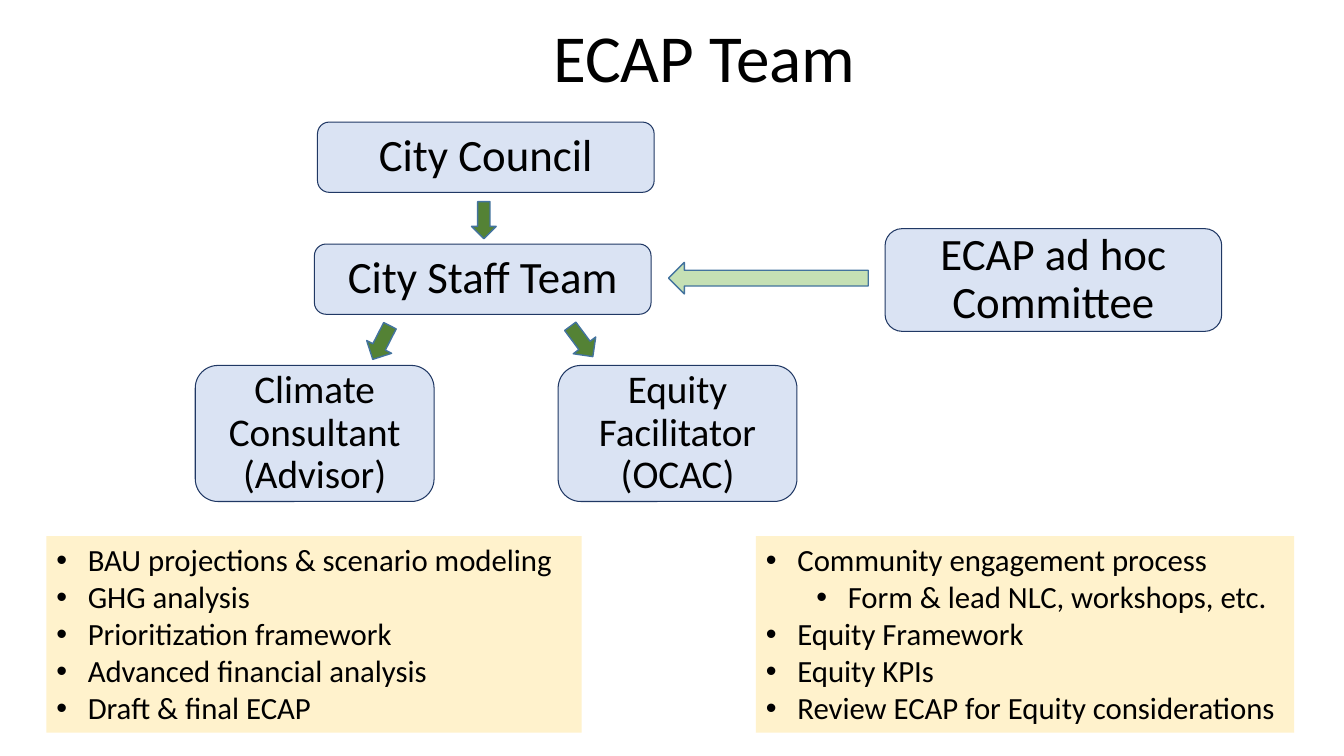
from lxml.etree import SubElement
from pptx import Presentation
from pptx.dml.color import RGBColor
from pptx.enum.shapes import MSO_SHAPE as Shape
from pptx.enum.text import MSO_ANCHOR as Anchor, PP_ALIGN as Align
from pptx.oxml.ns import qn
from pptx.util import Pt

COLORS = {
    "text": "000000",
    "role_fill": "DAE3F3",
    "role_line": "203864",
    "arrow": "548235",
    "advice_arrow": "C5E0B4",
    "arrow_line": "43739E",
    "task_fill": "FFF2CC",
}

# Boxes are left, top, width, height in points.
TITLE_BOX = (290, 12.2, 426.4, 62.6)
ROLES = [
    ((226.8, 87.2, 240.5, 50.2), 32, ["City Council"]),
    ((224.6, 174.3, 240.5, 50.2), 32, ["City Staff Team"]),
    ((632.2, 163.3, 240.5, 73.4), 32, ["ECAP ad hoc Committee"]),
    ((139.5, 261, 170.6, 97.2), 28, ["Climate Consultant", "(Advisor)"]),
    ((398.7, 261, 170.6, 97.2), 28, ["Equity", "Facilitator", "(OCAC)"]),
]
ARROWS = [
    ((336.8, 144, 17.6, 26.5), 0, "arrow"),
    ((262.4, 231.2, 20, 27), 27.1, "arrow"),
    ((405.4, 230.4, 20, 27), 323.3, "arrow"),
    ((537.6, 127.4, 22.5, 142.6), 90, "advice_arrow"),
]
TASKS = [
    ((33.1, 383, 382.3, 140.4), [
        (0, "BAU projections & scenario modeling"),
        (0, "GHG analysis"),
        (0, "Prioritization framework"),
        (0, "Advanced financial analysis"),
        (0, "Draft & final ECAP"),
    ]),
    ((540, 383, 384.5, 140.4), [
        (0, "Community engagement process"),
        (1, "Form & lead NLC, workshops, etc."),
        (0, "Equity Framework"),
        (0, "Equity KPIs"),
        (0, "Review ECAP for Equity considerations"),
    ]),
]


def color(name):
    return RGBColor.from_string(COLORS[name])


def add_para(frame, index, text, size, align):
    para = frame.paragraphs[0] if index == 0 else frame.add_paragraph()
    para.text = text
    para.alignment = align
    para.font.name = "Calibri"
    para.font.size = Pt(size)
    para.font.color.rgb = color("text")
    return para


def add_filled(page, kind, box, fill, line=None, width=1):
    shape = page.shapes.add_shape(kind, *map(Pt, box))
    shape.shadow.inherit = False
    shape.fill.solid()
    shape.fill.fore_color.rgb = color(fill)
    if line:
        shape.line.color.rgb = color(line)
        shape.line.width = Pt(width)
    else:
        shape.line.fill.background()
    return shape


def add_title(page, box, text):
    frame = page.shapes.add_textbox(*map(Pt, box)).text_frame
    frame.word_wrap = True
    frame.vertical_anchor = Anchor.MIDDLE
    add_para(frame, 0, text, 48, Align.CENTER).line_spacing = 0.9


def add_role(page, box, size, lines):
    shape = add_filled(page, Shape.FLOWCHART_ALTERNATE_PROCESS, box,
                       "role_fill", "role_line", 0.75)
    frame = shape.text_frame
    frame.word_wrap = True
    frame.vertical_anchor = Anchor.MIDDLE
    frame.margin_left = frame.margin_right = Pt(1.5)
    frame.margin_top = frame.margin_bottom = Pt(1.5)
    for index, text in enumerate(lines):
        add_para(frame, index, text, size, Align.CENTER).line_spacing = 0.9


def add_arrow(page, box, rotation, fill):
    arrow = add_filled(page, Shape.DOWN_ARROW, box, fill, "arrow_line")
    arrow.rotation = rotation


def set_bullet(para, level):
    """Give the paragraph a hanging bullet at its level."""
    para.level = level
    props = para._p.get_or_add_pPr()
    props.set("marL", str(Pt(22.5 + 36 * level)))
    props.set("indent", str(Pt(-22.5)))
    SubElement(props, qn("a:buFont")).set("typeface", "Arial")
    SubElement(props, qn("a:buChar")).set("char", "•")


def add_tasks(page, box, items):
    frame = add_filled(page, Shape.RECTANGLE, box, "task_fill").text_frame
    frame.word_wrap = True
    frame.vertical_anchor = Anchor.TOP
    for index, (level, text) in enumerate(items):
        para = add_para(frame, index, text, 22, Align.LEFT)
        set_bullet(para, level)


def add_team_page(deck):
    page = deck.slides.add_slide(deck.slide_layouts[6])
    add_title(page, TITLE_BOX, "ECAP Team")
    for role in ROLES:
        add_role(page, *role)
    for arrow in ARROWS:
        add_arrow(page, *arrow)
    for tasks in TASKS:
        add_tasks(page, *tasks)


def main():
    deck = Presentation()
    deck.slide_width, deck.slide_height = Pt(960), Pt(540)
    add_team_page(deck)
    deck.save("out.pptx")


if __name__ == "__main__":
    main()
